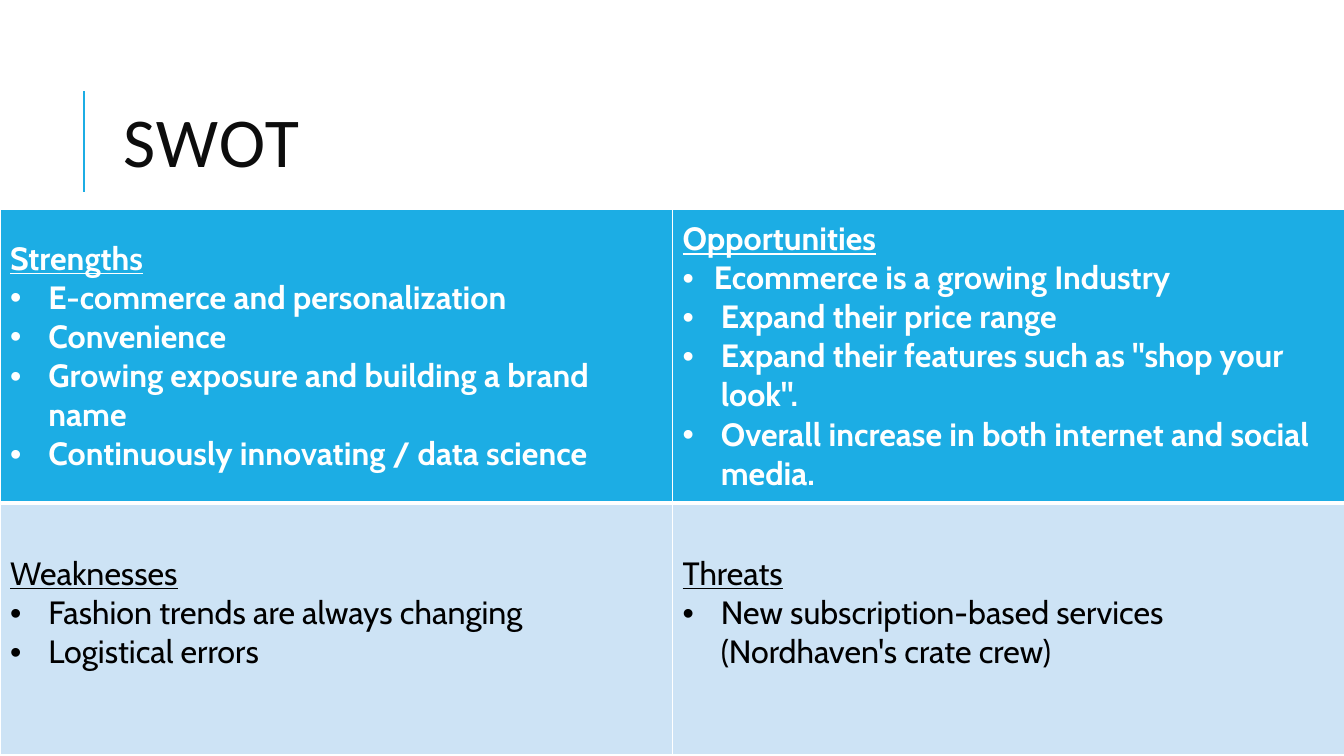
"""Build a SWOT slide with a title, an accent line and a two-by-two table."""
from lxml import etree
from pptx import Presentation
from pptx.dml.color import RGBColor
from pptx.enum.shapes import MSO_CONNECTOR
from pptx.enum.text import MSO_ANCHOR, MSO_AUTO_SIZE, PP_ALIGN
from pptx.oxml.ns import qn
from pptx.util import Inches, Pt

STRAIGHT = MSO_CONNECTOR.STRAIGHT
MIDDLE = MSO_ANCHOR.MIDDLE
LEFT = PP_ALIGN.LEFT
NO_AUTOFIT = MSO_AUTO_SIZE.NONE
BLUE = RGBColor(0x1C, 0xAD, 0xE4)
PALE_BLUE = RGBColor(0xCD, 0xE3, 0xF5)
WHITE = RGBColor(0xFF, 0xFF, 0xFF)
BLACK = RGBColor(0, 0, 0)
TITLE_COLOR = RGBColor(0x0D, 0x0D, 0x0D)

QUADRANTS = [
    [
        ("Strengths", [
            "E-commerce and personalization",
            "Convenience",
            "Growing exposure and building a brand name",
            "Continuously innovating / data science",
        ]),
        ("Opportunities", [
            "Ecommerce is a growing Industry",
            "Expand their price range",
            "Expand their features such as \"shop your look\".",
            "Overall increase in both internet and social media.",
        ]),
    ],
    [
        ("Weaknesses", [
            "Fashion trends are always changing",
            "Logistical errors",
        ]),
        ("Threats", [
            "New subscription-based services (Nordhaven's crate crew)",
        ]),
    ],
]
ROW_STYLES = [(BLUE, WHITE, True), (PALE_BLUE, BLACK, False)]
ROW_HEIGHTS = [2.91, 2.5]
BOTTOM_MARGINS = [0.05, 0.37]
ROW_BORDERS = [
    {"lnL": 1, "lnR": 1, "lnT": 1, "lnB": 3},
    {"lnL": 1, "lnR": 1, "lnT": 3, "lnB": 1},
]
COLUMN_WIDTH = 6.67


def add_borders(cell, widths):
    """Give the cell white borders with the given widths in points."""
    properties = cell._tc.get_or_add_tcPr()
    for side, width in widths.items():
        line = etree.SubElement(properties, qn(f"a:{side}"), w=str(Pt(width)))
        fill = etree.SubElement(line, qn("a:solidFill"))
        etree.SubElement(fill, qn("a:srgbClr"), val=str(WHITE))


def add_bullet(paragraph, indent):
    """Give the paragraph a round bullet with a hanging indent in inches."""
    properties = paragraph._p.get_or_add_pPr()
    properties.set("marL", str(Inches(indent)))
    properties.set("indent", str(-Inches(indent)))
    bullet_font = etree.Element(qn("a:buFont"), typeface="Arial")
    bullet = etree.Element(qn("a:buChar"), char="•")
    properties.insert(0, bullet_font)
    properties.insert(1, bullet)


presentation = Presentation()
presentation.slide_width = Inches(13.33)
presentation.slide_height = Inches(7.5)
slide = presentation.slides.add_slide(presentation.slide_layouts[5])

accent = slide.shapes.add_connector(
    STRAIGHT, Inches(0.83), Inches(1.9), Inches(0.83), Inches(0.9))
accent.line.color.rgb = BLUE
accent.line.width = Pt(1.5)
etree.SubElement(accent._element.spPr, qn("a:effectLst"))

title = slide.shapes.title
title.left, title.top = Inches(1.12), Inches(0.64)
title.width, title.height = Inches(10.63), Inches(1.64)
title.text_frame.text = "SWOT"
title.text_frame.vertical_anchor = MIDDLE
title.text_frame.auto_size = NO_AUTOFIT
paragraph = title.text_frame.paragraphs[0]
paragraph.alignment = LEFT
paragraph.line_spacing = 0.8
paragraph.font.name = "Calibri"
paragraph.font.size = Pt(50)
paragraph.font.color.rgb = TITLE_COLOR
paragraph.runs[0].font._element.set("spc", "100")

table = slide.shapes.add_table(
    2, 2, Inches(0), Inches(2.08),
    Inches(2 * COLUMN_WIDTH), Inches(sum(ROW_HEIGHTS))).table
for column in table.columns:
    column.width = Inches(COLUMN_WIDTH)

for row_index, quadrants in enumerate(QUADRANTS):
    table.rows[row_index].height = Inches(ROW_HEIGHTS[row_index])
    fill_color, text_color, bold = ROW_STYLES[row_index]
    for column_index, (heading, points) in enumerate(quadrants):
        cell = table.cell(row_index, column_index)
        add_borders(cell, ROW_BORDERS[row_index])
        cell.fill.solid()
        cell.fill.fore_color.rgb = fill_color
        cell.vertical_anchor = MIDDLE
        cell.margin_bottom = Inches(BOTTOM_MARGINS[row_index])
        cell.text = "\n".join([heading, *points])
        for index, paragraph in enumerate(cell.text_frame.paragraphs):
            paragraph.font.name = "Cabin"
            paragraph.font.size = Pt(23)
            paragraph.font.bold = bold
            paragraph.font.underline = index == 0
            paragraph.font.color.rgb = text_color
            if index > 0:
                narrow = heading == "Opportunities" and index == 1
                add_bullet(paragraph, 0.31 if narrow else 0.38)

presentation.save("out.pptx")
